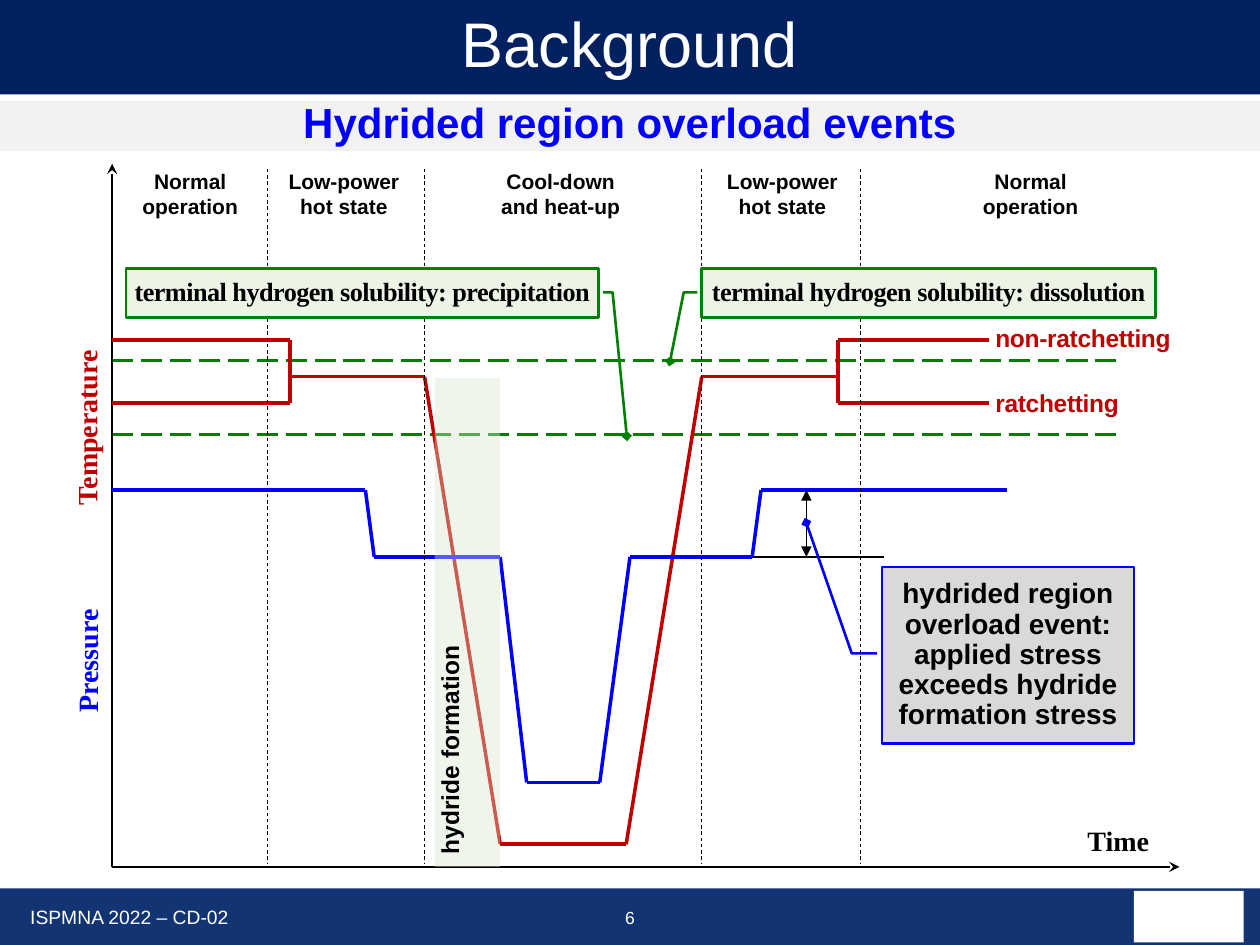
from itertools import pairwise

from lxml import etree
from pptx import Presentation
from pptx.dml.color import RGBColor
from pptx.enum.dml import MSO_LINE
from pptx.enum.shapes import MSO_CONNECTOR, MSO_SHAPE
from pptx.enum.text import MSO_ANCHOR, PP_ALIGN
from pptx.oxml.ns import qn
from pptx.util import Pt

PX = 9144  # EMU in one px, 100 px to the inch
RECT, CALLOUT = MSO_SHAPE.RECTANGLE, MSO_SHAPE.LINE_CALLOUT_2
STRAIGHT = MSO_CONNECTOR.STRAIGHT
DASH, LONG = MSO_LINE.DASH, MSO_LINE.LONG_DASH
TOP, MID = MSO_ANCHOR.TOP, MSO_ANCHOR.MIDDLE
LEFT, CENTER = PP_ALIGN.LEFT, PP_ALIGN.CENTER
SANS, SERIF = "Arial", "Times New Roman"
HEX = {
    "navy": "002060", "foot": "133472", "white": "FFFFFF", "pale": "F2F2F2",
    "black": "000000", "red": "C00000", "blue": "0000FF", "green": "008000",
    "grey": "D9D9D9", "mint": "EDF4E6", "leaf": "DBE8CD",
}


def rgb(name):
    return RGBColor.from_string(HEX[name])


def apply(target, values):
    for name, value in values.items():
        setattr(target, name, value)


def write(shape, text, size, color, font=SANS, bold=True, align=CENTER,
          anchor=TOP, inset=(0, 0, 0, 0), space=1.0, gap=0, track=0, turn=False):
    """Fill a shape with text: gap parts paragraphs, turn reads it upwards."""
    frame = shape.text_frame
    left, top, right, bottom = (n * PX for n in inset)
    apply(frame, {
        "text": text, "word_wrap": True, "vertical_anchor": anchor,
        "margin_left": left, "margin_top": top,
        "margin_right": right, "margin_bottom": bottom,
    })
    if turn:
        frame._txBody.bodyPr.set("vert", "vert270")
    for index, para in enumerate(frame.paragraphs):
        apply(para, {"alignment": align, "line_spacing": space,
                     "space_before": Pt(gap if index else 0)})
        for run in para.runs:
            apply(run.font, {"name": font, "size": Pt(size), "bold": bold})
            run.font.color.rgb = rgb(color)
            if track:
                run.font._element.set("spc", str(track))


def label(slide, box, text, size, color, **style):
    shape = slide.shapes.add_textbox(*(n * PX for n in box))
    write(shape, text, size, color, **style)


def block(slide, box, fill, kind=RECT):
    shape = slide.shapes.add_shape(kind, *(n * PX for n in box))
    shape.shadow.inherit = False
    shape.fill.solid()
    shape.fill.fore_color.rgb = rgb(fill)
    shape.line.fill.background()
    return shape


def tip(line, end, kind):
    etree.SubElement(line._get_or_add_ln(), qn(f"a:{end}End"), type=kind)


def stroke(slide, start, stop, color, width, dash=None, head=None, tail=None):
    wire = slide.shapes.add_connector(STRAIGHT, *(n * PX for n in start + stop))
    etree.SubElement(wire._element.spPr, qn("a:effectLst"))
    wire.line.color.rgb = rgb(color)
    wire.line.width = Pt(width)
    if dash:
        wire.line.dash_style = dash
    for end, kind in (("head", head), ("tail", tail)):
        if kind:
            tip(wire.line, end, kind)


def chain(slide, points, color):
    for start, stop in pairwise(points):
        stroke(slide, start, stop, color, 2)


def callout(slide, box, fill, edge, bends, flip=False):
    """Box with a bent leader; bends are y, x pairs as shares of the box."""
    shape = block(slide, box, fill, CALLOUT)
    for index, bend in enumerate(bends):
        shape.adjustments[index] = bend
    shape.line.color.rgb = rgb(edge)
    shape.line.width = Pt(1.5)
    tip(shape.line, "tail", "diamond")
    if flip:
        shape._element.spPr.xfrm.set("flipH", "1")
    return shape


def header(slide, x, y, w):
    block(slide, (x, y, w, 75), "navy")
    label(slide, (x, y, w, 75), "Background", 36, "white", bold=False,
          anchor=MID, space=0.9)
    band = block(slide, (x, y + 80, w, 40), "pale")
    write(band, "Hydrided region overload events", 24, "blue", anchor=MID,
          inset=(10, 5, 10, 5), space=0.85)


def footer(slide, x, y, w):
    bar = block(slide, (x, y, w, 45), "foot")
    write(bar, "ISPMNA 2022 – CD-02", 11, "white", bold=False, align=LEFT,
          anchor=MID, inset=(24, 5, 10, 5))
    label(slide, (x + 474, y + 10, 52, 30), "6", 10, "white", bold=False,
          inset=(10, 5, 10, 5))
    block(slide, (x + 900, y + 2, 87, 41), "white")


def chart(slide, x, y):
    """Draw the temperature and pressure history; x, y is the axis top."""
    def at(*points):
        return [(x + a, y + b) for a, b in points]

    def area(a, b, w, h):
        return x + a, y + b, w, h

    # Solubility limits and axes
    for level in (215, 156):
        stroke(slide, *at((0, level), (800, level)), "green", 1.5, dash=LONG)
    stroke(slide, *at((507, 312), (613, 312)), "black", 0.75)
    stroke(slide, *at((0, 558), (847, 558)), "black", 1.5, tail="stealth")
    stroke(slide, *at((0, 0), (0, 558)), "black", 1.5, head="stealth")
    label(slide, area(761, 524, 75, 33), "Time", 16, "black", font=SERIF)
    for box, name, color in (((-39, 140, 37, 139), "Temperature", "red"),
                             ((-38, 345, 36, 99), "Pressure", "blue")):
        label(slide, area(*box), name, 16, color, font=SERIF, anchor=MID, turn=True)

    # Histories
    for near, far in ((141, 0), (576, 696)):
        chain(slide, at((far, 140), (near, 140), (near, 190), (far, 190)), "red")
    chain(slide, at((141, 169), (248, 169), (308, 540), (408, 540),
                    (468, 169), (576, 169)), "red")
    chain(slide, at((0, 259), (201, 259), (208, 312), (308, 312), (329, 491),
                    (387, 491), (411, 312), (508, 312), (515, 259),
                    (710, 259)), "blue")

    # Phases
    for mid, name in ((62, "Normal operation"), (184, "Low-power hot state"),
                      (356, "Cool-down and heat-up"),
                      (532, "Low-power hot state"), (729, "Normal operation")):
        label(slide, area(mid - 50, 4, 100, 40), name, 12, "black")
    stroke(slide, *at((551, 259), (551, 312)), "black", 0.75,
           head="triangle", tail="triangle")
    event = callout(slide, area(611, 320, 200, 140), "grey", "blue",
                    (0.49, -0.02, 0.49, -0.12, -0.25, -0.3))
    write(event, "hydrided region overload event: applied stress exceeds "
          "hydride formation stress", 16, "black", anchor=MID, space=0.9)
    for edge in (123, 248, 468, 594):
        stroke(slide, *at((edge, 4), (edge, 555)), "black", 0.5, dash=DASH)

    # Notes on the limits
    for box, name, bends, flip in (
            ((468, 83, 360, 39), "dissolution",
             (0.49, -0.01, 0.49, -0.04, 1.89, -0.07), False),
            ((11, 83, 375, 39), "precipitation",
             (0.49, -0.01, 0.49, -0.03, 3.41, -0.06), True)):
        note = callout(slide, area(*box), "mint", "green", bends, flip)
        write(note, f"terminal hydrogen solubility: {name}", 15, "black",
              font=SERIF, anchor=MID, inset=(4, 5, 4, 5), space=0.9, track=-30)

    band = block(slide, area(256, 170, 52, 388), "leaf")
    tint = band._element.spPr.find(qn("a:solidFill"))[0]
    etree.SubElement(tint, qn("a:alpha"), val="40000")
    write(band, "hydride formation", 14, "black", align=LEFT,
          inset=(0, 0, 0, 5), turn=True)
    label(slide, area(701, 125, 150, 80), "non-ratchetting\nratchetting", 14,
          "red", align=LEFT, anchor=MID, space=0.9, gap=22, track=-20)


def main():
    deck = Presentation()
    apply(deck, {"slide_width": 1000 * PX, "slide_height": 750 * PX})
    slide = deck.slides.add_slide(deck.slide_layouts[6])
    header(slide, 0, 0, 1000)
    footer(slide, 0, 705, 1000)
    chart(slide, 89, 130)
    deck.save("out.pptx")


if __name__ == "__main__":
    main()
